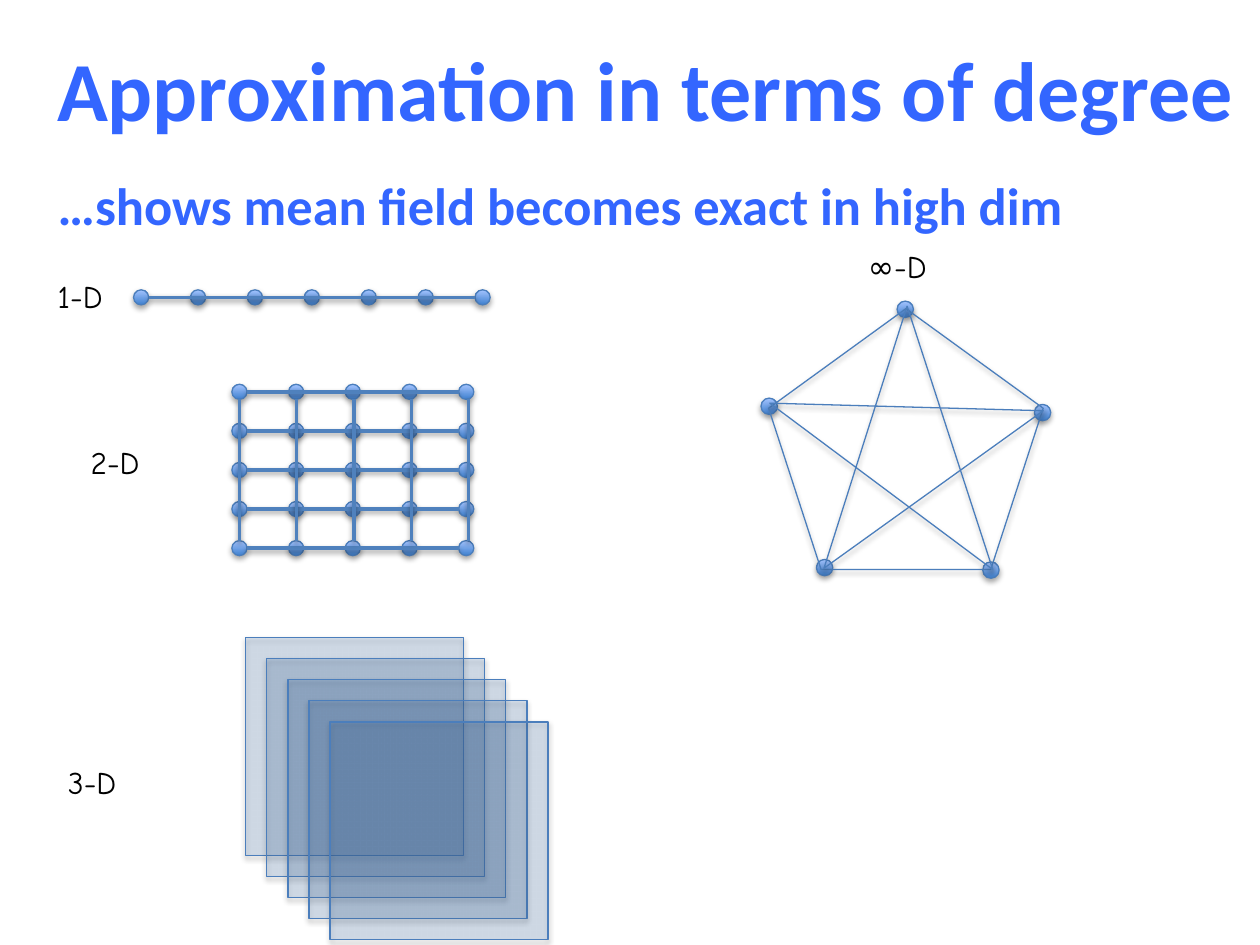
from lxml import etree
from pptx import Presentation
from pptx.dml.color import RGBColor
from pptx.enum.shapes import MSO_CONNECTOR, MSO_SHAPE
from pptx.enum.text import MSO_ANCHOR, MSO_AUTO_SIZE, PP_ALIGN
from pptx.oxml.ns import qn
from pptx.util import Inches, Pt

STRAIGHT = MSO_CONNECTOR.STRAIGHT
OVAL = MSO_SHAPE.OVAL
SQUARE = MSO_SHAPE.RECTANGLE
PENTAGON = MSO_SHAPE.REGULAR_PENTAGON
MIDDLE = MSO_ANCHOR.MIDDLE
TOP = MSO_ANCHOR.TOP
LEFT = PP_ALIGN.LEFT
CENTER = PP_ALIGN.CENTER
GROW = MSO_AUTO_SIZE.SHAPE_TO_FIT_TEXT

COLUMNS, ROWS = 10, 7.5


def color(value):
    return RGBColor.from_string(value)


class Diagram:
    heading_font, label_font = "Calibri", "Comic Neue"
    heading_color, label_color = "3366FF", "000000"
    edge_color, link_color = "4B7EBC", "4F81BD"
    dot_colors = ("3F80CE", "A4C4FF")
    cell = Inches(1)

    def __init__(self, deck):
        self.slide = deck.slides.add_slide(deck.slide_layouts[6])

    def grid(self, *cells):
        return [round(value * self.cell) for value in cells]

    def group(self):
        return self.slide.shapes.add_group_shape().shapes

    def shadow(self, item, opacity, distance):
        effects = etree.SubElement(item._element.spPr, qn("a:effectLst"))
        shade = etree.SubElement(
            effects, qn("a:outerShdw"), blurRad=str(Pt(3.1)),
            dist=str(Pt(distance)), dir="5400000", rotWithShape="0")
        tone = etree.SubElement(shade, qn("a:srgbClr"), val="000000")
        etree.SubElement(tone, qn("a:alpha"), val=str(opacity * 1000))

    def outline(self, shape):
        shape.line.color.rgb = color(self.edge_color)
        shape.line.width = Pt(0.75)
        self.shadow(shape, 35, 1.8)

    def dot(self, shapes, left, top, size):
        shape = shapes.add_shape(OVAL, *self.grid(left, top, size, size))
        shape.fill.gradient()
        shape.fill.gradient_angle = 90
        for stop, value in zip(shape.fill.gradient_stops, self.dot_colors):
            stop.color.rgb = color(value)
        self.outline(shape)

    def link(self, shapes, start, end):
        line = shapes.add_connector(STRAIGHT, *self.grid(*start, *end))
        line.line.color.rgb = color(self.link_color)
        line.line.width = Pt(2)
        self.shadow(line, 38, 1.6)

    def chain(self, shapes, left, top, step, count, size=0.12):
        for index in range(count):
            self.dot(shapes, left + index * step, top, size)
        middle = top + size / 2
        self.link(shapes, (left + (count - 1) * step, middle), (left + size, middle))

    def sheet(self, left, top, size):
        shape = self.slide.shapes.add_shape(SQUARE, *self.grid(left, top, size, size))
        shape.fill.solid()
        shape.fill.fore_color.rgb = color(self.link_color)
        tone = shape._element.spPr.find(qn("a:solidFill")).find(qn("a:srgbClr"))
        etree.SubElement(tone, qn("a:alpha"), val="20000")
        self.outline(shape)

    def pentagon(self, *place):
        shape = self.slide.shapes.add_shape(PENTAGON, *self.grid(*place))
        shape.fill.background()
        self.outline(shape)

    def star(self, points):
        corners = [self.grid(*point) for point in points]
        builder = self.slide.shapes.build_freeform(*corners[0])
        builder.add_line_segments(corners[1:], close=True)
        shape = builder.convert_to_shape()
        shape.fill.background()
        self.outline(shape)

    def text(self, words, place, size, font, tone, bold=False, wrap=True,
             anchor=TOP, align=LEFT, grow=True):
        box = self.slide.shapes.add_textbox(*self.grid(*place))
        frame = box.text_frame
        frame.word_wrap = wrap
        frame.vertical_anchor = anchor
        if grow:
            frame.auto_size = GROW
        para = frame.paragraphs[0]
        para.text = words
        para.alignment = align
        para.font.name = font
        para.font.size = Pt(size)
        para.font.bold = bold
        para.font.color.rgb = color(tone)

    def heading(self, words, place, size, **options):
        self.text(words, place, size, self.heading_font, self.heading_color,
                  bold=True, **options)

    def label(self, words, left, top, width):
        self.text(words, (left, top, width, 0.4), 18, self.label_font,
                  self.label_color, wrap=False)


def main():
    deck = Presentation()
    deck.slide_width = Inches(COLUMNS)
    deck.slide_height = Inches(ROWS)
    diagram = Diagram(deck)

    diagram.heading("Approximation in terms of degree", (0.17, -0.26, 9.91, 1.91),
                    48, anchor=MIDDLE, align=CENTER, grow=False)

    diagram.chain(diagram.group(), 1.06, 2.3, 2.71 / 6, 7)
    diagram.label("1-D", 0.36, 2.15, 0.57)

    lattice = diagram.group()
    for row in range(5):
        diagram.chain(lattice, 1.84, 3.05 + row * 0.31, 0.45, 5)
    for column in range(5):
        across = 1.9 + column * 1.82 / 4
        diagram.link(lattice, (across, 3.17), (across, 4.29))
    diagram.label("2-D", 0.62, 3.47, 0.62)

    for index in range(5):
        offset = index * 0.67 / 4
        diagram.sheet(1.95 + offset, 5.06 + offset, 1.73)
    diagram.label("3-D", 0.44, 6.01, 0.62)

    diagram.label("∞-D", 6.79, 1.91, 0.68)
    for left, top in ((7.12, 2.39), (6.48, 4.44), (7.8, 4.46), (6.04, 3.16), (8.21, 3.21)):
        diagram.dot(diagram.slide.shapes, left, top, 0.13)
    diagram.pentagon(6.1, 2.45, 2.18, 2.07)
    diagram.star(((7.2, 2.43), (6.54, 4.51), (8.28, 3.26), (6.11, 3.2), (7.88, 4.52)))

    diagram.heading("…shows mean field becomes exact in high dim",
                    (0.36, 1.32, 9.72, 0.61), 30)
    deck.save("out.pptx")


if __name__ == "__main__":
    main()
